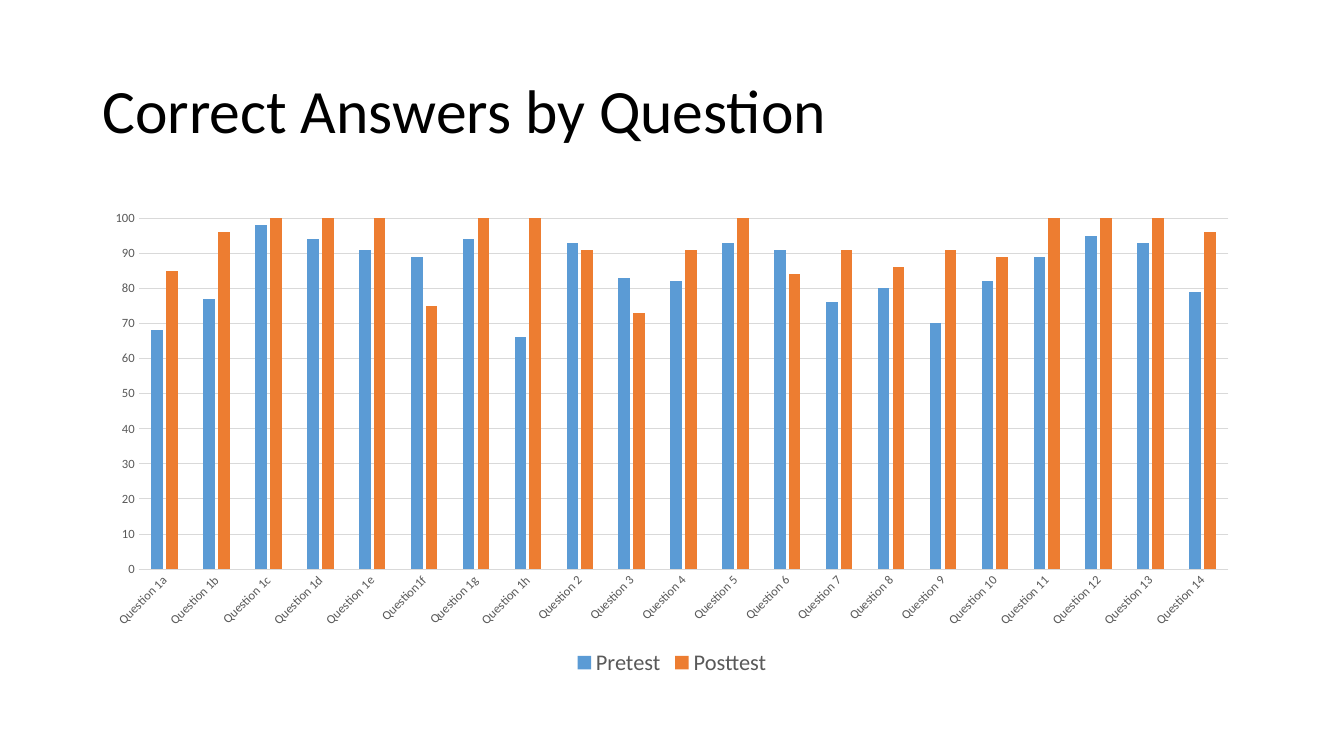
from pptx import Presentation
from pptx.chart.data import CategoryChartData
from pptx.dml.color import RGBColor
from pptx.enum import chart as charts, text
from pptx.util import Pt

QUESTIONS = (
    [f"Question 1{letter}" for letter in "abcde"]
    + ["Question1f", "Question 1g", "Question 1h"]
    + [f"Question {number}" for number in range(2, 15)]
)
SCORES = {
    "Pretest": [68, 77, 98, 94, 91, 89, 94, 66, 93, 83, 82,
                93, 91, 76, 80, 70, 82, 89, 95, 93, 79],
    "Posttest": [85, 96, 100, 100, 100, 75, 100, 100, 91, 73, 91,
                 100, 84, 91, 86, 91, 89, 100, 100, 100, 96],
}


def color(value):
    return RGBColor.from_string(value)


def format_font(font, size, fill, name="Calibri"):
    font.name = name
    font.size = Pt(size)
    font.color.rgb = color(fill)


def format_line(line, fill, width=0.75):
    line.color.rgb = color(fill)
    line.width = Pt(width)


class SlideBuilder:
    ink = "000000"
    label = "595959"
    rule = "D9D9D9"
    bars = ("5B9BD5", "ED7D31")

    def __init__(self, deck):
        self.page = deck.slides.add_slide(deck.slide_layouts[5])

    def title(self, words, left, top, width, height):
        box = self.page.shapes.title
        box.left, box.top, box.width, box.height = map(Pt, (left, top, width, height))
        frame = box.text_frame
        frame.word_wrap = True
        frame.auto_size = text.MSO_AUTO_SIZE.NONE
        frame.vertical_anchor = text.MSO_ANCHOR.MIDDLE
        para = frame.paragraphs[0]
        para.alignment = text.PP_ALIGN.LEFT
        para.line_spacing = 0.9
        span = para.add_run()
        span.text = words
        format_font(span.font, 44, self.ink)

    def column_chart(self, categories, series, left, top, width, height):
        data = CategoryChartData()
        data.categories = categories
        for name, values in series.items():
            data.add_series(name, values)
        chart = self.page.shapes.add_chart(
            charts.XL_CHART_TYPE.COLUMN_CLUSTERED,
            *map(Pt, (left, top, width, height)), data,
        ).chart
        format_font(chart.font, 10, self.ink)
        chart.has_title = False

        plot = chart.plots[0]
        plot.gap_width = 219
        plot.overlap = -27
        plot.vary_by_categories = False
        for bars, fill in zip(plot.series, self.bars):
            bars.format.fill.solid()
            bars.format.fill.fore_color.rgb = color(fill)

        self.axes(chart)
        chart.has_legend = True
        chart.legend.position = charts.XL_LEGEND_POSITION.BOTTOM
        chart.legend.include_in_layout = False
        format_font(chart.legend.font, 16, self.label)

    def axes(self, chart):
        for axis in (chart.category_axis, chart.value_axis):
            axis.major_tick_mark = charts.XL_TICK_MARK.NONE
            axis.minor_tick_mark = charts.XL_TICK_MARK.NONE
            format_font(axis.tick_labels.font, 9, self.label)
        format_line(chart.category_axis.format.line, self.rule)
        label_body = chart.category_axis._element.txPr.bodyPr
        label_body.set("rot", "-2700000")

        scale = chart.value_axis
        scale.minimum_scale = 0
        scale.maximum_scale = 100
        scale.major_unit = 10
        scale.format.line.fill.background()
        scale.has_major_gridlines = True
        format_line(scale.major_gridlines.format.line, self.rule)


def main():
    deck = Presentation()
    deck.slide_width = Pt(960)
    deck.slide_height = Pt(540)
    slide = SlideBuilder(deck)
    slide.title("Correct Answers by Question", 66, 28.75, 828, 104.4)
    slide.column_chart(QUESTIONS, SCORES, 66, 143.75, 828, 342.6)
    deck.save("out.pptx")


if __name__ == "__main__":
    main()
